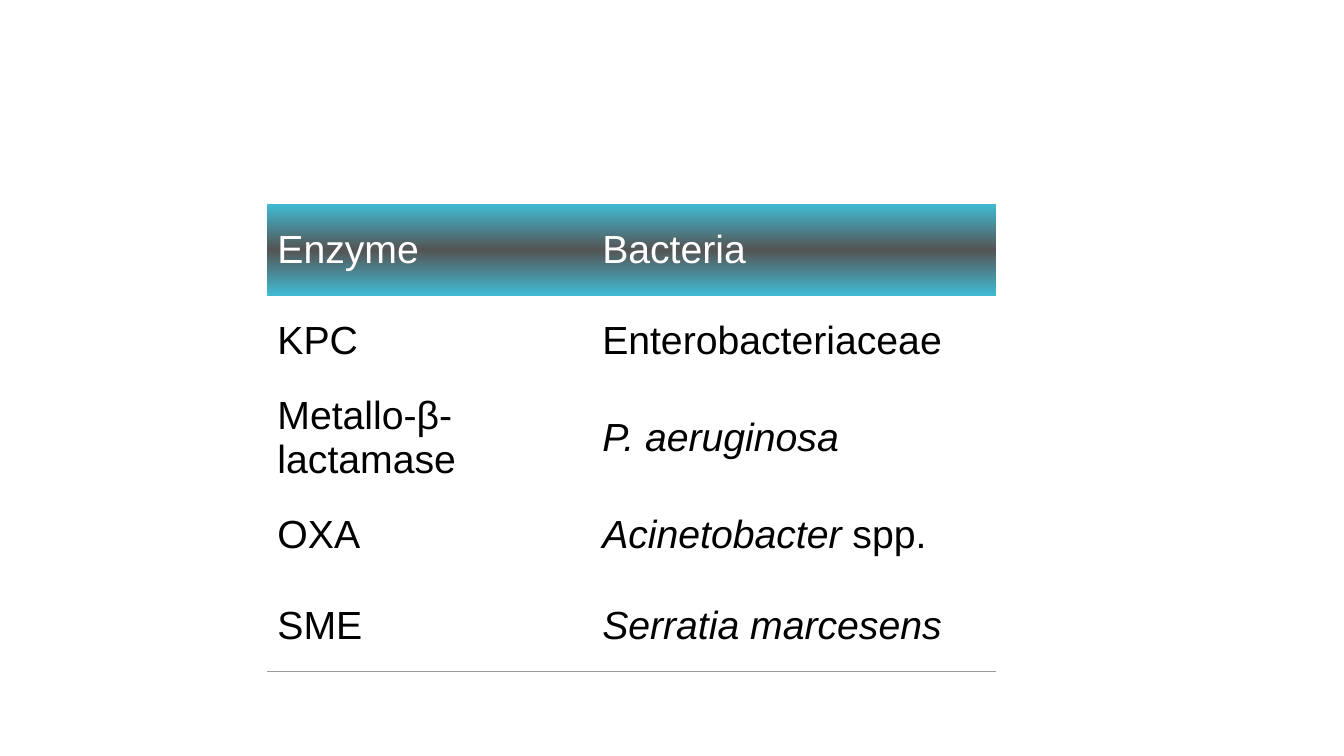
"""Build a slide with a table of carbapenemase enzymes and their bacteria."""
from lxml.etree import SubElement
from pptx import Presentation
from pptx.dml.color import RGBColor
from pptx.enum.text import MSO_ANCHOR
from pptx.oxml.ns import qn
from pptx.util import Pt

COLORS = {"teal": "40BAD2", "gray": "545454", "rule": "999999",
          "header": "FFFFFF", "body": "000000"}
ROWS = [
    ("Enzyme", [("Bacteria", False)]),
    ("KPC", [("Enterobacteriaceae", False)]),
    ("Metallo-β-lactamase", [("P. aeruginosa", True)]),
    ("OXA", [("Acinetobacter", True), (" spp.", False)]),
    ("SME", [("Serratia marcesens", True)]),
]
LEFT, TOP = 191, 146
COLUMN_WIDTHS = [232, 288.5]
ROW_HEIGHTS = [64.8, 64.8, 74.2, 64.8, 64.8]
HEADER_STOPS = [(0, "teal"), (50, "gray"), (100, "teal")]


def add_color(parent, name):
    SubElement(parent, qn("a:srgbClr"), val=COLORS[name])


def set_borders(cell, visible):
    properties = cell._tc.get_or_add_tcPr()
    for side in ("L", "R", "T", "B"):
        line = SubElement(properties, qn(f"a:ln{side}"), w=str(Pt(1)))
        if side in visible:
            add_color(SubElement(line, qn("a:solidFill")), visible[side])
        else:
            SubElement(line, qn("a:noFill"))


def fill_header(cell):
    gradient = SubElement(cell._tc.get_or_add_tcPr(), qn("a:gradFill"))
    stops = SubElement(gradient, qn("a:gsLst"))
    for percent, name in HEADER_STOPS:
        add_color(SubElement(stops, qn("a:gs"), pos=str(percent * 1000)), name)
    SubElement(gradient, qn("a:lin"), ang=str(90 * 60000), scaled="0")


def write_cell(cell, spans, color):
    cell.vertical_anchor = MSO_ANCHOR.MIDDLE
    para = cell.text_frame.paragraphs[0]
    spacing = SubElement(para._p.get_or_add_pPr(), qn("a:spcBef"))
    SubElement(spacing, qn("a:spcPct"), val="20000")
    para.font.name = "Arial"
    para.font.size = Pt(28)
    para.font.color.rgb = RGBColor.from_string(COLORS[color])
    for text, italic in spans:
        span = para.add_run()
        span.text = text
        span.font.italic = italic


def main():
    deck = Presentation()
    deck.slide_width, deck.slide_height = Pt(960), Pt(540)
    page = deck.slides.add_slide(deck.slide_layouts[6])
    table = page.shapes.add_table(
        len(ROWS), len(COLUMN_WIDTHS), Pt(LEFT), Pt(TOP),
        Pt(sum(COLUMN_WIDTHS)), Pt(sum(ROW_HEIGHTS))).table
    table.first_row = table.horz_banding = False
    for column, width in zip(table.columns, COLUMN_WIDTHS):
        column.width = Pt(width)
    for row, height in zip(table.rows, ROW_HEIGHTS):
        row.height = Pt(height)

    borders = {0: {"T": "teal", "B": "teal"}, 1: {"T": "teal"},
               len(ROWS) - 1: {"B": "rule"}}
    for index, (enzyme, bacteria) in enumerate(ROWS):
        for cell, spans in zip(table.rows[index].cells, ([(enzyme, False)], bacteria)):
            write_cell(cell, spans, "body" if index else "header")
            set_borders(cell, borders.get(index, {}))
            if index:
                cell.fill.background()
            else:
                fill_header(cell)
    deck.save("out.pptx")


if __name__ == "__main__":
    main()
